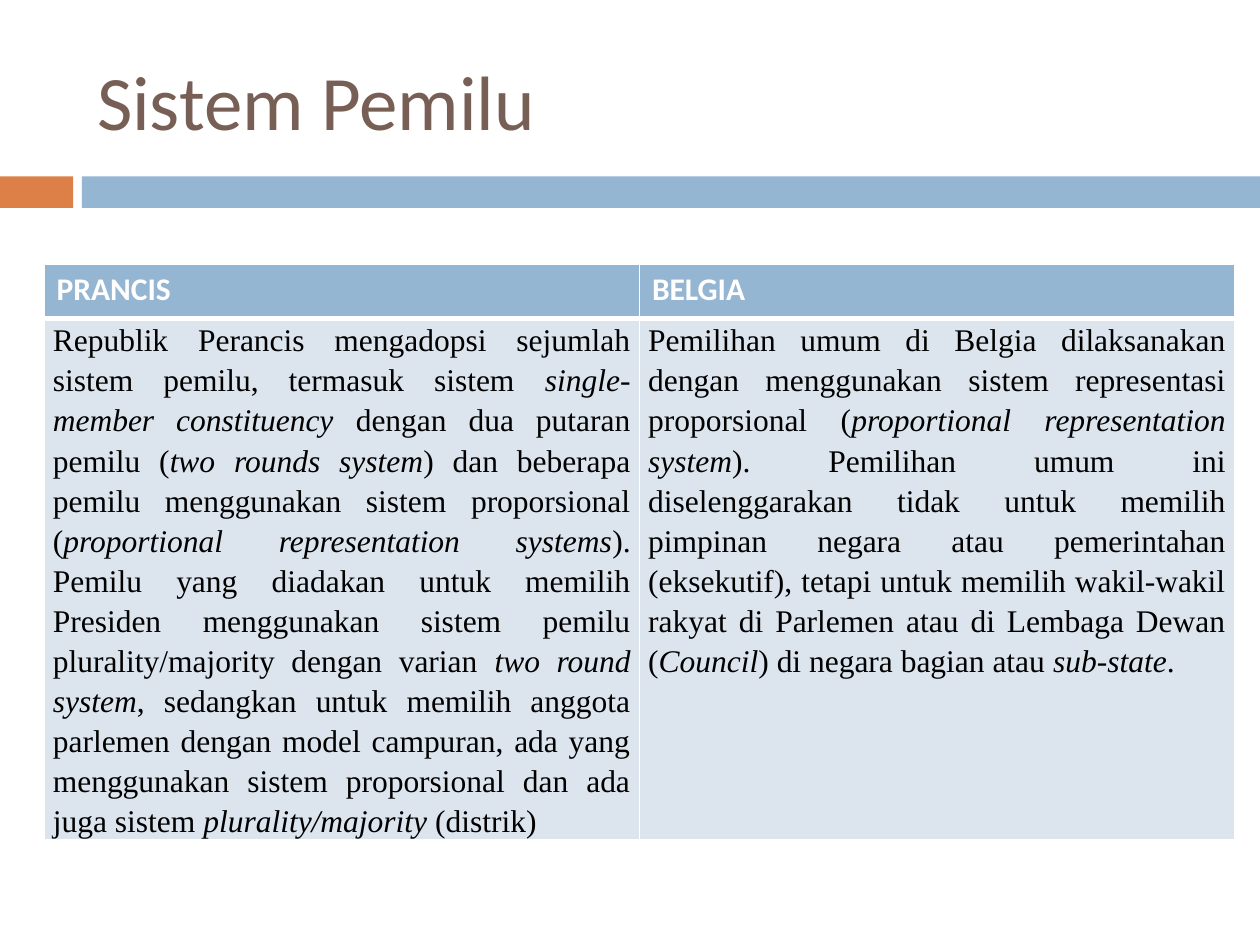
from lxml import etree
from pptx import Presentation
from pptx.dml.color import RGBColor
from pptx.enum.shapes import MSO_SHAPE
from pptx.enum.text import MSO_ANCHOR, PP_ALIGN
from pptx.oxml.ns import qn
from pptx.util import Inches, Pt

RECTANGLE = MSO_SHAPE.RECTANGLE
MIDDLE = MSO_ANCHOR.MIDDLE
LEFT, JUSTIFY = PP_ALIGN.LEFT, PP_ALIGN.JUSTIFY

ORANGE = RGBColor(0xDD, 0x80, 0x47)
BLUE = RGBColor(0x94, 0xB6, 0xD2)
PALE_BLUE = RGBColor(0xDC, 0xE5, 0xEE)
BROWN = RGBColor(0x77, 0x5F, 0x55)
WHITE = RGBColor(0xFF, 0xFF, 0xFF)
BLACK = RGBColor(0, 0, 0)

HEADING_FONT, BODY_FONT = "Calibri", "Times New Roman"
TITLE_ONLY = 5
WIDTH, HEIGHT = Inches(10), Inches(7.5)

COUNTRIES = {
    "PRANCIS": [
        ("Republik Perancis mengadopsi sejumlah sistem pemilu, termasuk sistem ", False),
        ("single-member constituency", True),
        (" dengan dua putaran pemilu (", False),
        ("two rounds system", True),
        (") dan beberapa pemilu menggunakan sistem proporsional (", False),
        ("proportional representation systems", True),
        ("). Pemilu yang diadakan untuk memilih Presiden menggunakan sistem pemilu "
         "plurality/majority dengan varian ", False),
        ("two round system", True),
        (", sedangkan untuk memilih anggota parlemen dengan model campuran, ada yang "
         "menggunakan sistem proporsional dan ada juga sistem ", False),
        ("plurality/majority", True),
        (" (distrik)", False),
    ],
    "BELGIA": [
        ("Pemilihan umum di Belgia dilaksanakan dengan menggunakan sistem representasi "
         "proporsional (", False),
        ("proportional representation system", True),
        ("). Pemilihan umum ini diselenggarakan tidak untuk memilih pimpinan negara atau "
         "pemerintahan (eksekutif), tetapi untuk memilih wakil-wakil rakyat di Parlemen "
         "atau di Lembaga Dewan (", False),
        ("Council", True),
        (") di negara bagian atau ", False),
        ("sub-state", True),
        (".", False),
    ],
}


def add_run(paragraph, text, font_name, size, color, bold=False, italic=False):
    run = paragraph.add_run()
    run.text = text
    run.font.name = font_name
    run.font.size = Pt(size)
    run.font.color.rgb = color
    run.font.bold = bold
    run.font.italic = italic


def place_title(slide, left, top, width, height):
    title = slide.shapes.title
    title.left, title.top, title.width, title.height = left, top, width, height
    title.text_frame.vertical_anchor = MIDDLE
    paragraph = title.text_frame.paragraphs[0]
    paragraph.alignment = LEFT
    add_run(paragraph, "Sistem Pemilu", HEADING_FONT, 44, BROWN)


def add_divider(slide, left, top, width, height):
    accent_width = int(width * 0.058)
    bar_offset = int(width * 0.065)
    parts = [(0, accent_width, ORANGE), (bar_offset, width - bar_offset, BLUE)]
    for offset, part_width, color in parts:
        bar = slide.shapes.add_shape(RECTANGLE, left + offset, top, part_width, height)
        bar.shadow.inherit = False
        bar.fill.solid()
        bar.fill.fore_color.rgb = color
        bar.line.fill.background()


def style_cell(cell, color, bottom_width):
    cell.fill.solid()
    cell.fill.fore_color.rgb = color
    properties = cell._tc.get_or_add_tcPr()
    for index, (side, points) in enumerate(zip("LRTB", (1, 1, 1, bottom_width))):
        border = etree.Element(qn(f"a:ln{side}"), w=str(Pt(points)))
        fill = etree.SubElement(border, qn("a:solidFill"))
        etree.SubElement(fill, qn("a:srgbClr"), val=str(WHITE))
        properties.insert(index, border)


def fill_heading(cell, text):
    style_cell(cell, BLUE, 3)
    add_run(cell.text_frame.paragraphs[0], text, HEADING_FONT, 18, WHITE, bold=True)


def fill_description(cell, runs):
    style_cell(cell, PALE_BLUE, 1)
    cell.margin_left = cell.margin_right = Inches(0.07)
    cell.margin_top = cell.margin_bottom = 0
    paragraph = cell.text_frame.paragraphs[0]
    paragraph.alignment = JUSTIFY
    paragraph.line_spacing = 1.15
    for text, italic in runs:
        add_run(paragraph, text, BODY_FONT, 18, BLACK, italic=italic)


def add_comparison(slide, left, top, width, height):
    frame = slide.shapes.add_table(2, len(COUNTRIES), left, top, width, height)
    table = frame.table
    table.rows[0].height = int(height * 0.094)
    table.rows[1].height = height - table.rows[0].height
    for column, (country, runs) in enumerate(COUNTRIES.items()):
        table.columns[column].width = width // len(COUNTRIES)
        fill_heading(table.cell(0, column), country)
        fill_description(table.cell(1, column), runs)


def main():
    presentation = Presentation()
    presentation.slide_width, presentation.slide_height = WIDTH, HEIGHT
    slide = presentation.slides.add_slide(presentation.slide_layouts[TITLE_ONLY])
    add_divider(slide, 0, Inches(1.4), WIDTH, Inches(0.25))
    place_title(slide, Inches(0.67), Inches(0.25), Inches(8.92), Inches(1.08))
    add_comparison(slide, Inches(0.35), Inches(2.1), Inches(9.45), Inches(4.55))
    presentation.save("out.pptx")


if __name__ == "__main__":
    main()
